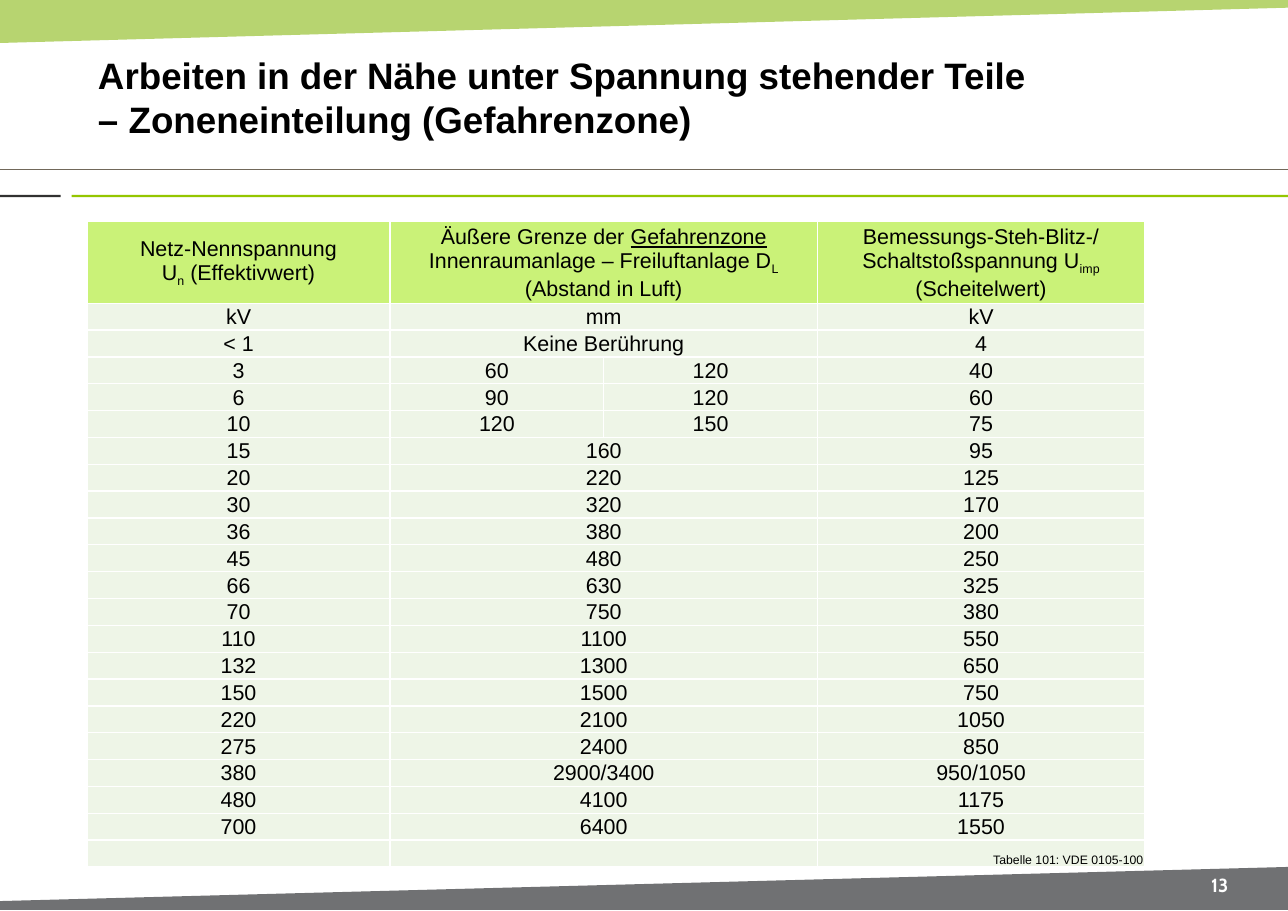
from lxml import etree
from pptx import Presentation
from pptx.dml.color import RGBColor
from pptx.enum import shapes, text
from pptx.oxml import ns
from pptx.util import Inches, Pt

BLACK = RGBColor(0x00, 0x00, 0x00)
WHITE = RGBColor(0xFF, 0xFF, 0xFF)
LEAF = RGBColor(0x95, 0xC0, 0x2A)
LIME = RGBColor(0x94, 0xC6, 0x00)
DARK = RGBColor(0x31, 0x31, 0x30)
GREY = RGBColor(0x70, 0x71, 0x73)
BROWN = RGBColor(0x71, 0x68, 0x5A)
HEAD_FILL = RGBColor(0xCA, 0xF2, 0x78)
BODY_FILL = RGBColor(0xEE, 0xF5, 0xE7)

WIDTH, HEIGHT = 11.69, 8.27
TITLE = "Arbeiten in der Nähe unter Spannung stehender Teile \v– Zoneneinteilung (Gefahrenzone)"
PAGE = "13"
SOURCE = "Tabelle 101: VDE 0105-100"

HEADINGS = {
    0: [("Netz-Nennspannung", "break"), ("U", ""), ("n", "sub"), (" (Effektivwert)", "")],
    1: [("Äußere Grenze der ", ""), ("Gefahrenzone", "underline"),
        (" Innenraumanlage – Freiluftanlage D", ""), ("L", "sub"), (" (Abstand in Luft)", "")],
    3: [("Bemessungs-Steh-Blitz-/Schaltstoßspannung U", ""), ("imp", "sub"), (" (Scheitelwert)", "")],
}
VALUES = [
    ("kV", "mm", "kV"),
    ("< 1", "Keine Berührung", "4"),
    ("3", "60", "120", "40"),
    ("6", "90", "120", "60"),
    ("10", "120", "150", "75"),
    ("15", "160", "95"),
    ("20", "220", "125"),
    ("30", "320", "170"),
    ("36", "380", "200"),
    ("45", "480", "250"),
    ("66", "630", "325"),
    ("70", "750", "380"),
    ("110", "1100", "550"),
    ("132", "1300", "650"),
    ("150", "1500", "750"),
    ("220", "2100", "1050"),
    ("275", "2400", "850"),
    ("380", "2900/3400", "950/1050"),
    ("480", "4100", "1175"),
    ("700", "6400", "1550"),
    ("", "", SOURCE),
]
COLUMN_WIDTHS = [2.75, 1.94, 1.94, 2.97]
HEAD_HEIGHT, ROW_HEIGHT = 0.74, 0.24

WEDGES = [
    ([(0, 0), (WIDTH, 0), (WIDTH, 0.07), (0, 0.39)], LEAF, 67),
    ([(WIDTH, 8.26), (0, 8.26), (0, 8.18), (WIDTH, 7.87)], GREY, 100),
]
BARS = [
    (0, 1.49, WIDTH, 0.39, WHITE),
    (0, 1.77, 0.55, 0.02, DARK),
    (0.65, 1.77, 11.06, 0.02, LIME),
]


def paint(shape, color):
    shape.shadow.inherit = False
    shape.fill.solid()
    shape.fill.fore_color.rgb = color
    shape.line.fill.background()


def add_wedge(slide, corners, color, opacity):
    points = [(Inches(x), Inches(y)) for x, y in corners]
    builder = slide.shapes.build_freeform(*points[0])
    builder.add_line_segments(points[1:], close=True)
    wedge = builder.convert_to_shape()
    paint(wedge, color)
    if opacity < 100:
        tint = wedge._element.spPr.find(".//" + ns.qn("a:srgbClr"))
        etree.SubElement(tint, ns.qn("a:alpha"), val=str(opacity * 1000))


def set_font(paragraph, name, size, color, bold=False):
    font = paragraph.font
    font.name, font.size, font.bold = name, Pt(size), bold
    font.color.rgb = color


def add_label(slide, box, words, font, align):
    frame = slide.shapes.add_textbox(*map(Inches, box)).text_frame
    frame.word_wrap = True
    frame.vertical_anchor = text.MSO_ANCHOR.MIDDLE
    frame.margin_left = frame.margin_right = Inches(0.11)
    frame.margin_top = frame.margin_bottom = Inches(0.06)
    frame.text = words
    frame.paragraphs[0].alignment = align
    set_font(frame.paragraphs[0], *font)


def style_cell(cell, fill):
    cell.fill.solid()
    cell.fill.fore_color.rgb = fill
    cell.margin_left = cell.margin_right = cell.margin_top = Inches(0.01)
    cell.margin_bottom = 0
    cell.vertical_anchor = text.MSO_ANCHOR.MIDDLE
    props = cell._tc.get_or_add_tcPr()
    for index, side in enumerate(("lnL", "lnR", "lnT", "lnB")):
        border = etree.Element(ns.qn("a:" + side), w=str(Pt(1)))
        solid = etree.SubElement(border, ns.qn("a:solidFill"))
        etree.SubElement(solid, ns.qn("a:srgbClr"), val=str(WHITE))
        props.insert(index, border)


def fill_cell(cell, parts):
    paragraph = cell.text_frame.paragraphs[0]
    is_source = parts[0][0] == SOURCE
    paragraph.alignment = text.PP_ALIGN.RIGHT if is_source else text.PP_ALIGN.CENTER
    if is_source:
        cell.vertical_anchor = text.MSO_ANCHOR.BOTTOM
    size = 8 if is_source else 14
    set_font(paragraph, "Arial", size, BLACK)
    for words, style in parts:
        if not words:
            etree.SubElement(paragraph._p, ns.qn("a:endParaRPr"), sz=str(size * 100))
            continue
        run = paragraph.add_run()
        run.text = words
        if style == "sub":
            run._r.get_or_add_rPr().set("baseline", "-25000")
        elif style == "underline":
            run.font.underline = True
        elif style == "break":
            paragraph.add_line_break()


def add_zone_table(slide):
    height = HEAD_HEIGHT + ROW_HEIGHT * len(VALUES)
    zones = slide.shapes.add_table(
        len(VALUES) + 1, len(COLUMN_WIDTHS), Inches(0.79), Inches(2.01),
        Inches(sum(COLUMN_WIDTHS)), Inches(height)).table
    zones.first_row = zones.horz_banding = False
    for column, width in zip(zones.columns, COLUMN_WIDTHS):
        column.width = Inches(width)
    rows = [HEADINGS]
    for values in VALUES:
        places = range(4) if len(values) == 4 else (0, 1, 3)
        rows.append({place: [(value, "")] for place, value in zip(places, values)})
    for r, contents in enumerate(rows):
        zones.rows[r].height = Inches(ROW_HEIGHT if r else HEAD_HEIGHT)
        for c in range(len(COLUMN_WIDTHS)):
            style_cell(zones.cell(r, c), BODY_FILL if r else HEAD_FILL)
        if 2 not in contents:
            zones.cell(r, 1).merge(zones.cell(r, 2))
        for c, parts in contents.items():
            fill_cell(zones.cell(r, c), parts)


def main():
    deck = Presentation()
    deck.slide_width, deck.slide_height = Inches(WIDTH), Inches(HEIGHT)
    slide = deck.slides.add_slide(deck.slide_layouts[6])

    for corners, color, opacity in WEDGES:
        add_wedge(slide, corners, color, opacity)
    for *box, color in BARS:
        bar = slide.shapes.add_shape(shapes.MSO_SHAPE.RECTANGLE, *map(Inches, box))
        paint(bar, color)
    rule = slide.shapes.add_connector(
        shapes.MSO_CONNECTOR.STRAIGHT, Inches(WIDTH), Inches(1.54), 0, Inches(1.54))
    rule.line.color.rgb = BROWN
    rule.line.width = Pt(0.75)
    etree.SubElement(rule._element.spPr, ns.qn("a:effectLst"))

    add_label(slide, (0.78, 0.28, 10.43, 1.19), TITLE,
              ("Arial", 24, BLACK, True), text.PP_ALIGN.LEFT)
    add_label(slide, (10.73, 7.89, 0.68, 0.29), PAGE,
              ("Cabin", 12.4, WHITE, True), text.PP_ALIGN.CENTER)
    add_zone_table(slide)
    deck.save("out.pptx")


if __name__ == "__main__":
    main()
